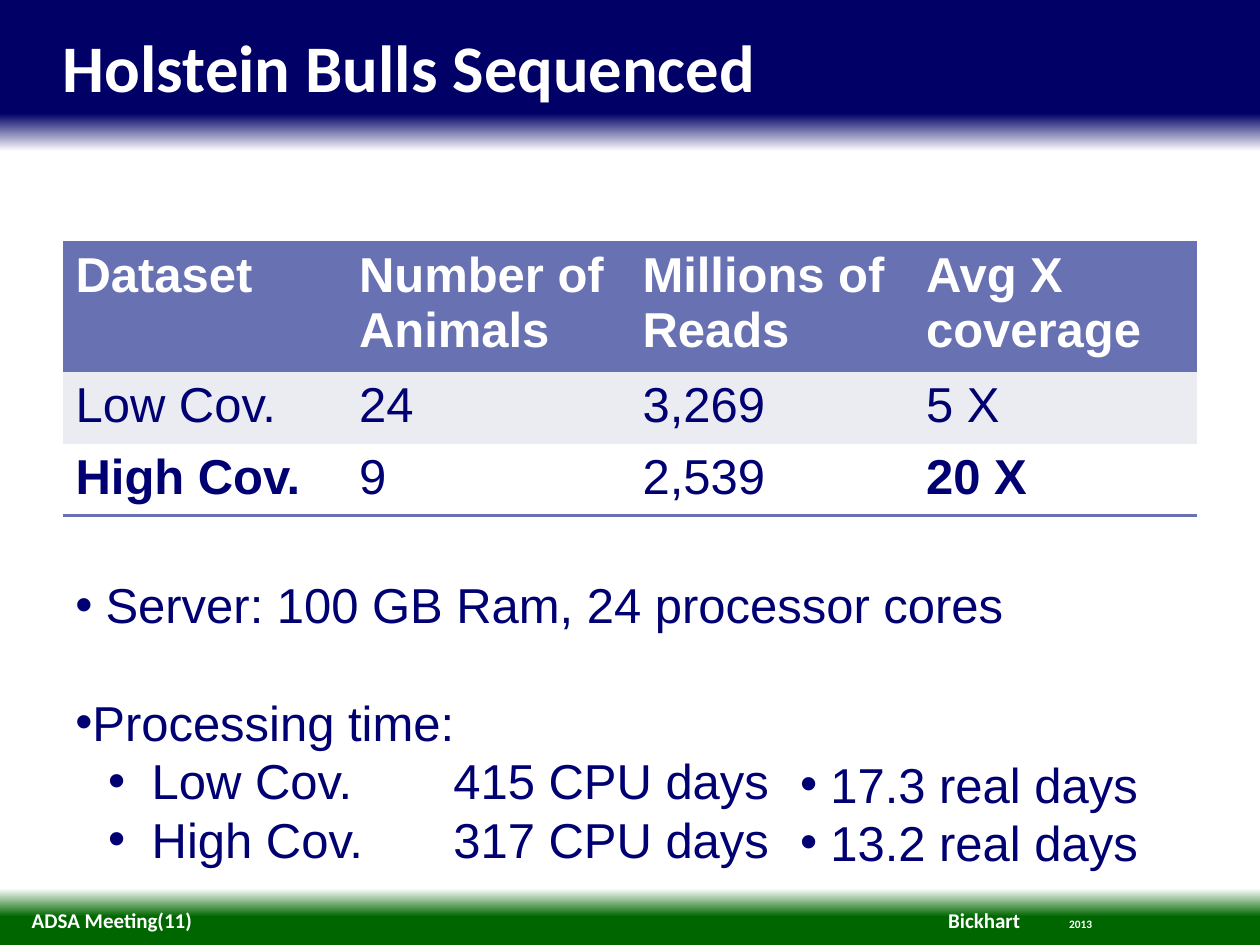
from lxml import etree
from pptx import Presentation
from pptx.dml.color import RGBColor
from pptx.enum.text import MSO_ANCHOR, PP_ALIGN
from pptx.oxml import parse_xml
from pptx.oxml.ns import nsdecls, qn
from pptx.util import Cm, Pt

COLORS = {"navy": "000066", "green": "006600", "white": "FFFFFF",
          "text": "000073", "header": "6871B2", "band": "EBEBF2"}
STOPS = [(0, "navy"), (12, "navy"), (16, "white"),
         (94, "white"), (97, "green"), (100, "green")]

LABELS = [
    ("Holstein Bulls Sequenced", (1.27, 0.51, 22.86, 1.63), 38, PP_ALIGN.LEFT, True),
    ("ADSA Meeting(11)", (0.64, 18.29, 13.26, 0.51), 12, PP_ALIGN.LEFT, True),
    ("Bickhart", (19.1, 18.29, 1.47, 0.51), 12, PP_ALIGN.RIGHT, False),
    ("2013", (21.01, 18.49, 1.55, 0.28), 6.5, PP_ALIGN.CENTER, True),
]

ROWS = [
    ["Dataset", "Number of Animals", "Millions of Reads", "Avg X coverage"],
    ["Low Cov.", "24", "3,269", "5 X"],
    ["High Cov.", "9", "2,539", "20 X"],
]
ROW_FILLS = ["header", "band", "white"]
ROW_HEIGHTS = [2.52, 1.33, 1.33]
BOLD_CELLS = {(0, column) for column in range(4)} | {(2, 0), (2, 3)}
TABLE_LEFT, TABLE_TOP, COLUMN_WIDTH = 1.27, 4.88, 5.715
NO_STYLE = "{2D5ABB26-0587-4C30-8999-92F81FD0307C}"

LINE = 33.5
TAB = 7.62
LISTS = [
    ((1.27, 11.47, 22.86, 6.25), [
        ("Server: 100 GB Ram, 24 processor cores", 0.61, 0.61, 0),
        ("Processing time:", 0.34, 0.34, LINE),
        ("Low Cov.\t415 CPU days", 1.54, 0.88, 0),
        ("High Cov.\t317 CPU days", 1.54, 0.88, 0),
    ]),
    ((15.88, 15.08, 9.52, 2.64), [
        ("17.3 real days", 0.61, 0.61, 0),
        ("13.2 real days", 0.61, 0.61, 0),
    ]),
]


def set_font(font, size, color, name="Arial", bold=False):
    values = {"size": Pt(size), "name": name, "bold": bold}
    for key, value in values.items():
        setattr(font, key, value)
    font.color.rgb = RGBColor.from_string(COLORS[color])


def paint_background(page):
    fill = page.background.fill
    fill.gradient()
    gradient = next(page.element.iter(qn("a:gradFill")))
    stops = "".join(
        f'<a:gs pos="{position * 1000}"><a:srgbClr val="{COLORS[color]}"/></a:gs>'
        for position, color in STOPS)
    gradient.replace(gradient.find(qn("a:gsLst")),
                     parse_xml(f'<a:gsLst {nsdecls("a")}>{stops}</a:gsLst>'))
    gradient.find(qn("a:lin")).set("ang", "5400000")


def add_box(page, place):
    box = page.shapes.add_textbox(*map(Cm, place))
    box.text_frame.word_wrap = True
    return box.text_frame


def add_label(page, text, place, size, align, wrap):
    frame = add_box(page, place)
    values = {"margin_left": 0, "margin_right": 0, "margin_top": 0,
              "margin_bottom": 0, "word_wrap": wrap,
              "vertical_anchor": MSO_ANCHOR.MIDDLE}
    for key, value in values.items():
        setattr(frame, key, value)
    para = frame.paragraphs[0]
    para.text, para.alignment = text, align
    set_font(para.font, size, "white", "Calibri", True)


def add_border(cell, side):
    border = parse_xml(
        f'<a:{side} {nsdecls("a")} w="{Pt(2)}"><a:solidFill>'
        f'<a:srgbClr val="{COLORS["header"]}"/></a:solidFill></a:{side}>')
    cell.fill._xPr.insert(0, border)


def add_data_table(page):
    frame = page.shapes.add_table(
        len(ROWS), len(ROWS[0]), Cm(TABLE_LEFT), Cm(TABLE_TOP),
        Cm(COLUMN_WIDTH * len(ROWS[0])), Cm(sum(ROW_HEIGHTS)))
    table = frame.table
    next(frame._element.iter(qn("a:tableStyleId"))).text = NO_STYLE
    for column in table.columns:
        column.width = Cm(COLUMN_WIDTH)
    for row, texts in enumerate(ROWS):
        table.rows[row].height = Cm(ROW_HEIGHTS[row])
        for column, text in enumerate(texts):
            cell = table.cell(row, column)
            cell.text = text
            cell.fill.solid()
            cell.fill.fore_color.rgb = RGBColor.from_string(COLORS[ROW_FILLS[row]])
            set_font(cell.text_frame.paragraphs[0].runs[0].font, 28,
                     "white" if row == 0 else "text", bold=(row, column) in BOLD_CELLS)
            if row == 0:
                add_border(cell, "lnT")
            if row == len(ROWS) - 1:
                add_border(cell, "lnB")


def add_list(page, place, items):
    frame = add_box(page, place)
    for index, (text, margin, hanging, before) in enumerate(items):
        para = frame.add_paragraph() if index else frame.paragraphs[0]
        para.text = text
        para.line_spacing = Pt(LINE)
        if before:
            para.space_before = Pt(before)
        properties = para._p.get_or_add_pPr()
        properties.set("marL", str(Cm(margin)))
        properties.set("indent", str(-Cm(hanging)))
        etree.SubElement(properties, qn("a:buFont"), typeface="Arial")
        etree.SubElement(properties, qn("a:buChar"), char="•")
        if "\t" in text:
            tabs = etree.SubElement(properties, qn("a:tabLst"))
            etree.SubElement(tabs, qn("a:tab"), pos=str(Cm(TAB)), algn="l")
        set_font(para.font, 28, "text")


def main():
    deck = Presentation()
    deck.slide_width, deck.slide_height = Cm(25.4), Cm(19.05)
    page = deck.slides.add_slide(deck.slide_layouts[6])
    paint_background(page)
    for label in LABELS:
        add_label(page, *label)
    add_data_table(page)
    for place, items in LISTS:
        add_list(page, place, items)
    deck.save("out.pptx")


if __name__ == "__main__":
    main()
